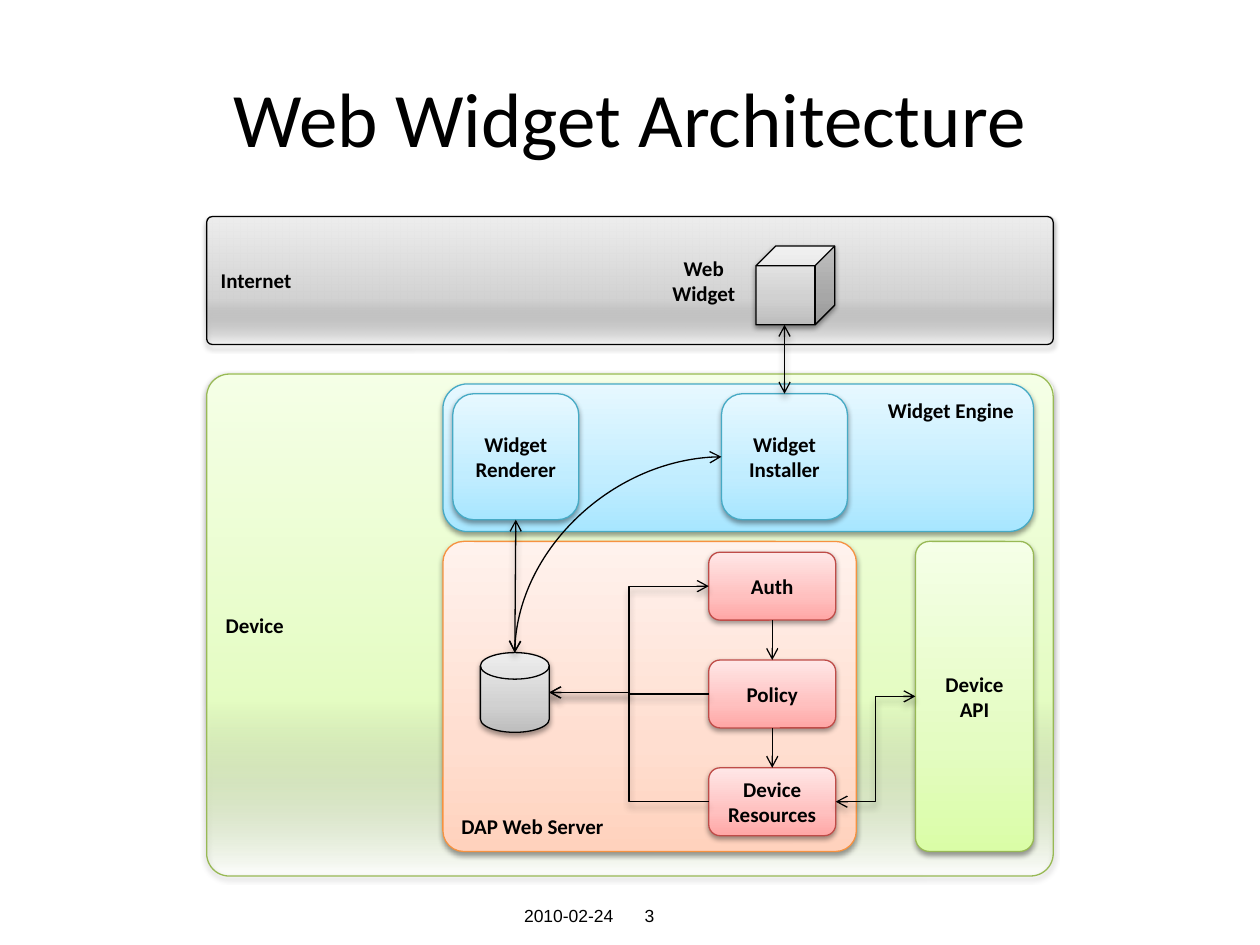
from typing import NamedTuple

from pptx import Presentation, util as u
from pptx.dml.color import RGBColor
from pptx.enum import shapes, text
from pptx.oxml import parse_xml
from pptx.oxml.ns import nsdecls

COLS, ROWS = 128, 96
WIDTH, HEIGHT = u.Inches(10), u.Inches(7.5)
KIND, LINK = shapes.MSO_SHAPE, shapes.MSO_CONNECTOR
ALIGN, ANCHOR = text.PP_ALIGN, text.MSO_ANCHOR

# Gradient stops from bottom to top, then the outline
GREEN = ("DAFDA7", "E4FCC2", "F5FFE7", "98B955")
BLUE = ("A7E6FF", "C1EDFF", "E7F8FF", "46AAC5")
GREY = ("BDBDBD", "D1D1D1", "EEEEEE", "000000")
ORANGE = ("FFD2BD", "FFDED0", "FFF2ED", "F69240")
RED = ("FFA6A5", "FFC0BF", "FFE7E7", "BF4C48")


class Box(NamedTuple):
    """A rectangle in grid columns and rows."""
    x: float
    y: float
    w: float
    h: float

    def inner(self, dx, dy, w, h):
        return Box(self.x + dx, self.y + dy, w, h)

    def point(self, across, down):
        return self.x + across * self.w, self.y + down * self.h

    def emu(self):
        return to_emu(self.x, self.y) + to_emu(self.w, self.h)


def to_emu(x, y):
    return int(x * WIDTH / COLS), int(y * HEIGHT / ROWS)


def color(value):
    return RGBColor.from_string(value)


def write(sp, content, size=12, font="Calibri", bold=True, align=ALIGN.CENTER,
          anchor=ANCHOR.MIDDLE, spacing=None, inset=None):
    tf = sp.text_frame
    tf.word_wrap = True
    tf.vertical_anchor = anchor
    if inset is not None:
        tf.margin_left = tf.margin_right = tf.margin_top = tf.margin_bottom = inset
    for i, line in enumerate(content.split("\n")):
        p = tf.add_paragraph() if i else tf.paragraphs[0]
        p.alignment = align
        if spacing:
            p.line_spacing = u.Pt(spacing)
        r = p.add_run()
        r.text = line
        r.font.size, r.font.name, r.font.bold = u.Pt(size), font, bold
        r.font.color.rgb = color("000000")


def add_label(s, box, content, **style):
    write(s.shapes.add_textbox(*box.emu()), content, **style)


def add_effects(sp, alpha=0, blur=0, dist=0):
    """Append a downward shadow, or an empty effect list when alpha is 0."""
    shadow = (f'<a:outerShdw blurRad="{u.Pt(blur)}" dist="{u.Pt(dist)}" dir="5400000" '
              f'rotWithShape="0"><a:srgbClr val="000000"><a:alpha val="{alpha * 1000}"/>'
              '</a:srgbClr></a:outerShdw>') if alpha else ""
    sp._element.spPr.append(
        parse_xml(f'<a:effectLst {nsdecls("a")}>{shadow}</a:effectLst>'))


def add_block(s, box, palette, content="", kind=KIND.ROUNDED_RECTANGLE,
              radius=None, fade=False, **style):
    """Add a shaded shape; fade makes its lower edge transparent."""
    sp = s.shapes.add_shape(kind, *box.emu())
    if radius is not None:
        sp.adjustments[0] = radius
    sp.line.color.rgb = color(palette[3])
    sp.line.width = u.Pt(0.75)
    stops = ""
    for pos, value in zip((0, 35, 100), palette):
        alpha = '<a:alpha val="0"/>' if fade and pos == 0 else ""
        stops += (f'<a:gs pos="{pos * 1000}"><a:srgbClr val="{value}">{alpha}'
                  '</a:srgbClr></a:gs>')
    sp.line._ln.addprevious(parse_xml(
        f'<a:gradFill {nsdecls("a")} rotWithShape="1"><a:gsLst>{stops}</a:gsLst>'
        '<a:lin ang="16200000" scaled="0"/></a:gradFill>'))
    add_effects(sp, 38, 3.1, 1.6)
    if content:
        write(sp, content, **style)


def add_arrow(s, start, end, kind=LINK.STRAIGHT, both=False, shadow=True):
    sp = s.shapes.add_connector(kind, *to_emu(*start), *to_emu(*end))
    sp.line.color.rgb = color("000000")
    sp.line.width = u.Pt(0.75)
    for tag in ("headEnd", "tailEnd") if both else ("tailEnd",):
        sp.line._ln.append(parse_xml(f'<a:{tag} {nsdecls("a")} type="arrow"/>'))
    add_effects(sp, *((40, 4, 3) if shadow else ()))
    return sp


def draw_internet(s, box):
    add_block(s, box, GREY, "Internet", radius=0.045, fade=True, align=ALIGN.LEFT)
    add_label(s, box.inner(44, 4, 13, 5), "Web\nWidget")
    cube = box.inner(55.8, 3, 8, 8)
    add_block(s, cube, GREY, kind=KIND.CUBE)
    return cube


def draw_engine(s, box):
    add_block(s, box, BLUE, "Widget Engine", align=ALIGN.RIGHT, anchor=ANCHOR.TOP)
    renderer, installer = (box.inner(dx, 1, 12.8, 12.8) for dx in (1, 28.3))
    add_block(s, renderer, BLUE, "Widget Renderer")
    add_block(s, installer, BLUE, "Widget Installer")
    return renderer, installer


def draw_server(s, box):
    add_block(s, box, ORANGE, "DAP Web Server", radius=0.067,
              align=ALIGN.LEFT, anchor=ANCHOR.BOTTOM)
    modules = [box.inner(27, 1.1 + 10.95 * i, 12.9, 6.9) for i in range(3)]
    for module, name in zip(modules, ("Auth", "Policy", "Device\nResources")):
        add_block(s, module, RED, name)
    for upper, lower in zip(modules, modules[1:]):
        add_arrow(s, upper.point(0.5, 1), lower.point(0.5, 0), shadow=False)

    store = box.inner(3.8, 11.3, 7, 8.1)
    auth, policy, resources = modules
    outlet = store.point(1, 0.5)
    add_arrow(s, outlet, auth.point(0, 0.5), LINK.ELBOW)
    for module in (resources, policy):
        add_arrow(s, module.point(0, 0.5), outlet, LINK.ELBOW)
    add_block(s, store, GREY, kind=KIND.FLOWCHART_MAGNETIC_DISK)
    return store, resources


def draw_device(s, box):
    add_block(s, box, GREEN, "Device", radius=0.045, fade=True, align=ALIGN.LEFT)
    renderer, installer = draw_engine(s, box.inner(24, 1, 60, 15))
    store, resources = draw_server(s, box.inner(24, 17, 42, 31.5))
    api = box.inner(72, 17, 12, 31.5)
    add_block(s, api, GREEN, "Device\nAPI", radius=0.118)
    add_arrow(s, resources.point(1, 0.5), api.point(0, 0.5), LINK.ELBOW, both=True)
    add_arrow(s, renderer.point(0.5, 1), store.point(0.5, 0), both=True)
    curve = add_arrow(s, installer.point(0, 0.5), store.point(0.5, 0),
                      LINK.CURVE, both=True, shadow=False)
    curve._element.spPr.prstGeom.set("prst", "curvedConnector2")
    return installer


def draw_footer(s, box):
    style = dict(size=10, font="Arial", bold=False, anchor=ANCHOR.TOP,
                 spacing=17, inset=0)
    add_label(s, box.inner(0, 0, 15.1, 2.7), "2010-02-24", align=ALIGN.RIGHT, **style)
    add_label(s, box.inner(18.3, 0, 15.1, 2.7), "3", align=ALIGN.LEFT, **style)


def main():
    prs = Presentation()
    prs.slide_width, prs.slide_height = WIDTH, HEIGHT
    s = prs.slides.add_slide(prs.slide_layouts[6])
    draw_footer(s, Box(47.2, 91.1, 33.4, 2.7))
    add_label(s, Box(6.4, 3.84, 115.2, 16), "Web Widget Architecture",
              size=44, bold=False)
    cube = draw_internet(s, Box(21, 22, 86, 13))
    installer = draw_device(s, Box(21, 38, 86, 51))
    top = installer.point(0.5, 0)
    add_arrow(s, top, (top[0], cube.y + cube.h), both=True)
    prs.save("out.pptx")


if __name__ == "__main__":
    main()
